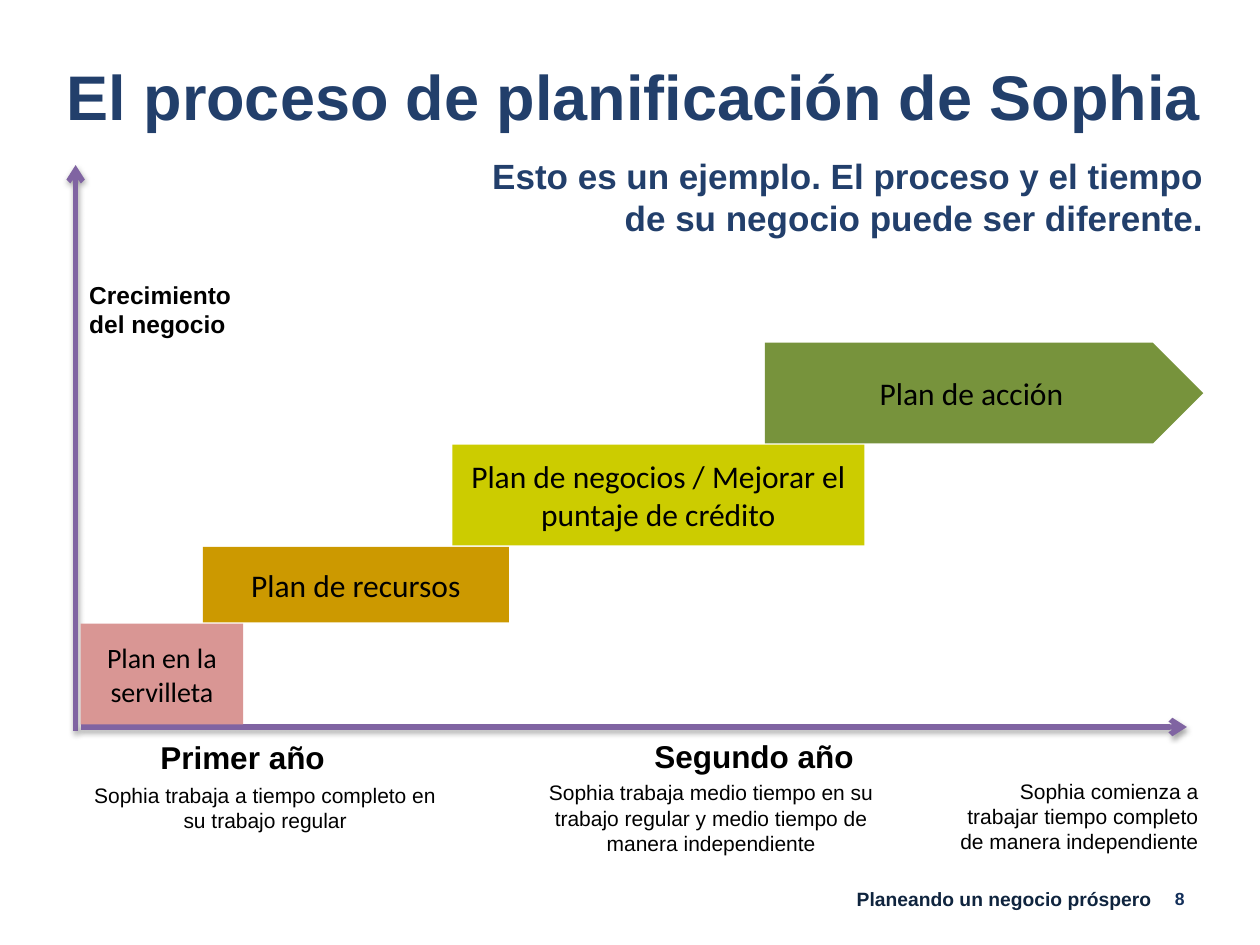
from lxml.etree import SubElement
from pptx import Presentation
from pptx.dml.color import RGBColor
from pptx.enum.shapes import MSO_CONNECTOR, MSO_SHAPE
from pptx.enum.text import MSO_ANCHOR, PP_ALIGN
from pptx.oxml.ns import qn
from pptx.util import Inches, Pt

HUES = {
    "title": "223F6B", "foot": "0F243E", "page": "132F5A", "text": "000000",
    "axis": "8064A2", "napkin": "D99694", "means": "CC9900",
    "credit": "CCCC00", "action": "77933C",
}
LEFT, MID, RIGHT = PP_ALIGN.LEFT, PP_ALIGN.CENTER, PP_ALIGN.RIGHT


def hue(name):
    """Return the named colour."""
    return RGBColor.from_string(HUES[name])


def write(shape, text, size, tone="text", align=LEFT, bold=False, face="Arial"):
    """Fill a shape with one formatted run."""
    frame = shape.text_frame
    frame.word_wrap = True
    para = frame.paragraphs[0]
    para.alignment = align
    run = para.add_run()
    run.text = text
    font = run.font
    font.name, font.size, font.bold = face, Pt(size), bold
    font.color.rgb = hue(tone)


def label(slide, box, text, size, **style):
    """Add a wrapped text box."""
    shape = slide.shapes.add_textbox(*map(Inches, box))
    write(shape, text, size, **style)


def arrow(slide, start, end):
    """Add an axis line with an arrowhead and a soft shadow."""
    line = slide.shapes.add_connector(
        MSO_CONNECTOR.STRAIGHT, *map(Inches, (*start, *end)))
    line.line.color.rgb = hue("axis")
    line.line.width = Pt(3)
    props = line._element.spPr
    SubElement(props.find(qn("a:ln")), qn("a:tailEnd"), type="arrow")
    effects = SubElement(props, qn("a:effectLst"))
    shade = SubElement(effects, qn("a:outerShdw"), blurRad=str(Pt(3.1)),
                       dist=str(Pt(1.8)), dir="5400000", rotWithShape="0")
    tint = SubElement(shade, qn("a:srgbClr"), val=HUES["text"])
    SubElement(tint, qn("a:alpha"), val="35000")


def head(slide, box):
    """Place the title and the remark below it."""
    x, y, w, h = box
    title = slide.shapes.title
    title.left, title.top, title.width, title.height = map(Inches, box)
    title.text_frame.vertical_anchor = MSO_ANCHOR.MIDDLE
    write(title, "El proceso de planificación de Sophia", 36, "title", bold=True)
    label(slide, (x + 3.16, y + 0.76, 6.06, 0.77),
          "Esto es un ejemplo. El proceso y el tiempo de su negocio puede ser diferente.",
          20, tone="title", align=RIGHT, bold=True)


def axes(slide, box):
    """Draw both axes and name the upright one."""
    x, y, w, h = box
    base = y + h - 0.03
    arrow(slide, (x, y + h), (x, y))
    arrow(slide, (x + 0.04, base), (x + w, base))
    label(slide, (x + 0.01, y + 0.86, 1.57, 0.57),
          "Crecimiento del negocio", 14, bold=True)


def steps(slide, box):
    """Stack the plans upward from the foot of the box."""
    x, y, w, h = box
    plans = [
        ("Plan en la servilleta", "napkin", 0, 1.29, 0.8, 16),
        ("Plan de recursos", "means", 0.97, 2.43, 0.6, 18),
        ("Plan de negocios / Mejorar el puntaje de crédito", "credit", 2.95, 3.27, 0.8, 18),
        ("Plan de acción", "action", 5.43, w - 5.43, 0.8, 18),
    ]
    top = y + h + 0.01
    for text, tone, shift, wide, high, size in plans:
        top -= high + 0.01
        kind = MSO_SHAPE.PENTAGON if tone == "action" else MSO_SHAPE.RECTANGLE
        step = slide.shapes.add_shape(
            kind, *map(Inches, (x + shift, top, wide, high)))
        step.shadow.inherit = False
        step.fill.solid()
        step.fill.fore_color.rgb = hue(tone)
        step.line.fill.background()
        step.text_frame.vertical_anchor = MSO_ANCHOR.MIDDLE
        write(step, text, size, align=MID, face="Calibri")


def years(slide, box):
    """Place the years and the notes on Sophia's work."""
    x, y, w, h = box
    for shift, drop, text in [(0.14, 0.01, "Primer año"), (4.2, 0, "Segundo año")]:
        label(slide, (x + shift, y + drop, 2.35, 0.4), text, 18, align=MID, bold=True)
    notes = [
        (0, 0.36, 2.99, 0.5, MID, "Sophia trabaja a tiempo completo en su trabajo regular"),
        (3.6, 0.34, 2.87, 0.71, MID,
         "Sophia trabaja medio tiempo en su trabajo regular y medio tiempo de manera independiente"),
        (w - 2.18, 0.33, 2.18, 0.71, RIGHT,
         "Sophia comienza a trabajar tiempo completo de manera independiente"),
    ]
    for shift, drop, wide, high, align, text in notes:
        label(slide, (x + shift, y + drop, wide, high), text, 12, align=align)


def foot(slide, box):
    """Place the course name and the page number."""
    x, y, w, h = box
    label(slide, (x, y, 3.99, h), "Planeando un negocio próspero", 11,
          tone="foot", align=RIGHT, bold=True)
    label(slide, (x + w - 0.42, y + 0.01, 0.42, 0.27), "8", 10,
          tone="page", align=RIGHT, bold=True)


def main():
    """Build and save the slide."""
    deck = Presentation()
    deck.slide_width, deck.slide_height = Inches(10), Inches(7.5)
    slide = deck.slides.add_slide(deck.slide_layouts[5])
    foot(slide, (5.25, 6.99, 4.25, 0.29))
    head(slide, (0.43, 0.42, 9.47, 0.67))
    axes(slide, (0.6, 1.31, 8.82, 4.49))
    steps(slide, (0.64, 2.72, 8.91, 3.03))
    years(slide, (0.61, 5.8, 9, 1.05))
    deck.save("out.pptx")


if __name__ == "__main__":
    main()
